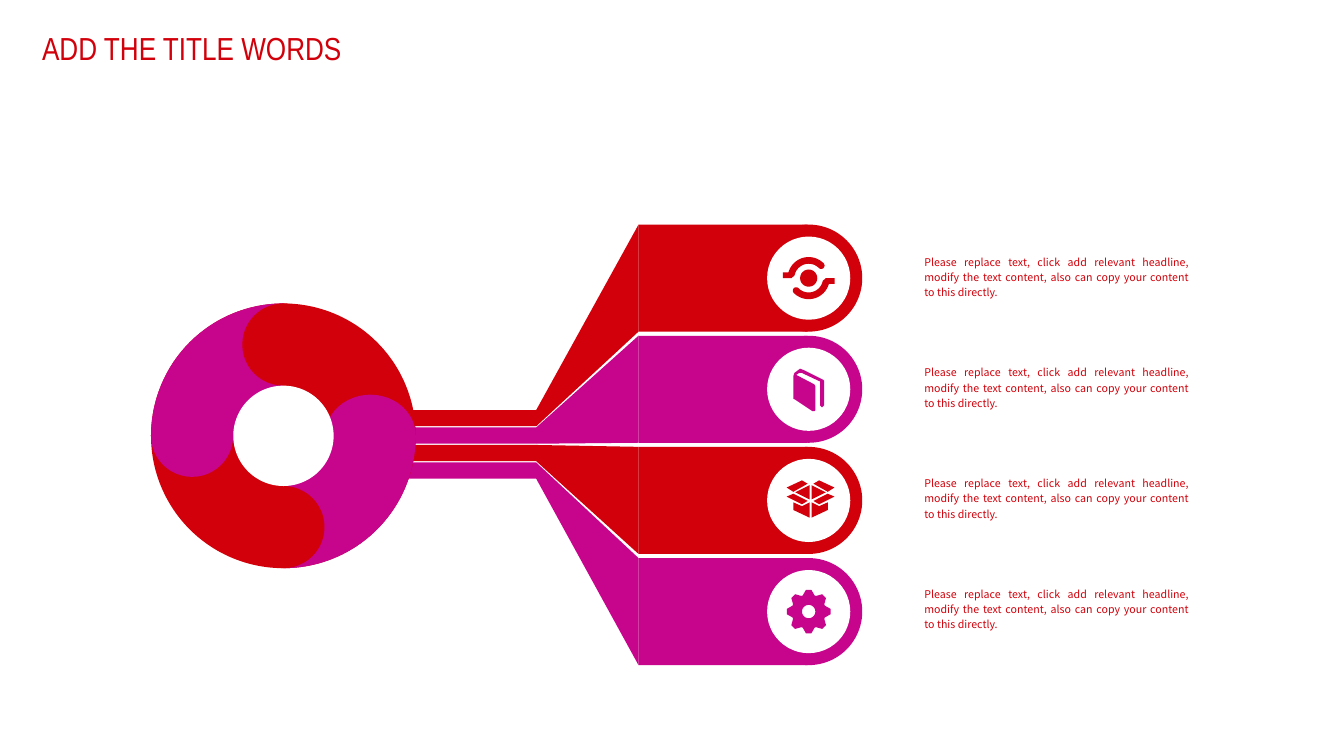
import math
from dataclasses import dataclass

import pptx
import pptx.dml.color
import pptx.enum.shapes
import pptx.enum.text
import pptx.shapes.autoshape
import pptx.shapes.shapetree
import pptx.text.text
import pptx.util

Point = tuple[float, float]
Contour = list[Point]
Shapes = pptx.shapes.shapetree.SlideShapes
Preset = pptx.enum.shapes.MSO_SHAPE

CELL = pptx.util.Inches(0.1)
COLUMNS, ROWS = 140.6, 79.1
RED, PURPLE, WHITE = "D1000A", "C7058C", "FFFFFF"
ADVICE = (
    "Please replace text, click add relevant headline, modify the text content, "
    "also can copy your content to this directly."
)

BRANCH_TOP, BRANCH_PITCH, BRANCH_HEIGHT = 23.5, 11.63, 11.2
STEM_TOP, STEM_PITCH, STEM_HEIGHT = 42.9, 1.83, 1.7
STEM_LEFT, STEM_RIGHT = 42.7, 56.1
BODY_LEFT, BODY_WIDTH = 66.8, 17.7
BADGE_COLUMN, BADGE_DIAMETER = 84.6, 8.7
ADVICE_LEFT, ADVICE_TOP, ADVICE_PITCH = 96.7, 26.5, 11.57
HUB_COLUMN, HUB_ROW = 29.65, 45.6
RING_DIAMETER, HOLE_DIAMETER, LOBE_DIAMETER = 27.7, 10.5, 8.6


@dataclass(frozen=True)
class Branch:
    color: str
    icon: list[Contour]


@dataclass(frozen=True)
class Lobe:
    color: str
    column: float
    row: float
    width: float = LOBE_DIAMETER


def cells(count: float) -> int:
    return round(count * CELL)


def rgb(color: str) -> pptx.dml.color.RGBColor:
    return pptx.dml.color.RGBColor.from_string(color)


def paint(shape: pptx.shapes.autoshape.Shape, color: str) -> None:
    shape.shadow.inherit = False
    shape.fill.solid()
    shape.fill.fore_color.rgb = rgb(color)
    shape.line.fill.background()


def block(shapes: Shapes, preset: Preset, left: float, top: float,
          width: float, height: float, color: str) -> pptx.shapes.autoshape.Shape:
    shape = shapes.add_shape(preset, cells(left), cells(top), cells(width), cells(height))
    paint(shape, color)
    return shape


def disc(shapes: Shapes, column: float, row: float, width: float, height: float,
         color: str, preset: Preset = Preset.OVAL) -> pptx.shapes.autoshape.Shape:
    return block(shapes, preset, column - width / 2, row - height / 2, width, height, color)


def outline(shapes: Shapes, contours: list[Contour], color: str) -> None:
    scaled = [[(cells(x), cells(y)) for x, y in contour] for contour in contours]
    builder = shapes.build_freeform(*scaled[0][0], scale=1.0)
    builder.add_line_segments(scaled[0][1:], close=True)
    for contour in scaled[1:]:
        builder.move_to(*contour[0])
        builder.add_line_segments(contour[1:], close=True)
    paint(builder.convert_to_shape(), color)


def polar(radius: float, degrees: float) -> Point:
    angle = math.radians(degrees)
    return radius * math.cos(angle), radius * math.sin(angle)


def arc(radius: float, start: float, end: float, center: Point = (0, 0)) -> Contour:
    steps = 24
    turns = [polar(radius, start + (end - start) * step / steps) for step in range(steps + 1)]
    return [(center[0] + x, center[1] + y) for x, y in turns]


def eye_icon() -> list[Contour]:
    lid = [(-2.7, 0), (-2.7, -0.6), *arc(2.2, 196, 315),
           *arc(0.35, 315, 495, polar(1.85, 315)),
           *arc(1.5, 315, 191), (-1.8, 0)]
    return [lid, [(-x, -y) for x, y in lid], arc(0.9, 0, 360)]


def book_icon() -> list[Contour]:
    return [[
        (1.5, -1), (-0.5, -2), (-0.9, -2.15), (-1.5, -1.7), (-1.6, -1.4), (-1.6, 1),
        (-1.4, 1.1), (0.4, 2.3), (0.6, 2.3), (0.7, 2.2), (0.7, -0.3), (0.6, -0.5),
        (-1.3, -1.5), (-1, -1.7), (-0.7, -1.7), (1.2, -0.8), (1.2, 1.7), (1.4, 1.9),
        (1.6, 1.7), (1.6, -0.9),
    ]]


def box_icon() -> list[Contour]:
    half = [
        [(0.1, -1.6), (1.6, -0.85), (0.1, -0.1)],
        [(2.5, -0.4), (0.9, 0.4), (0.3, 0.05), (1.8, -0.7)],
        [(2.5, -1.35), (1.8, -0.9), (0.3, -1.75), (0.9, -2.1)],
        [(0.1, 0.2), (0.1, 1.8), (1.8, 1), (1.8, 0.2), (0.9, 0.6)],
    ]
    return [[(0.2 + side * x, y) for x, y in face] for side in (-1, 1) for face in half]


def gear_icon() -> list[Contour]:
    tooth = [(1.8, -20), (2.3, -7), (2.3, 7), (1.8, 20)]
    rim = [polar(radius, turn + angle) for turn in range(0, 360, 45) for radius, angle in tooth]
    return [rim, arc(0.7, 360, 0)]


def write(paragraph: pptx.text.text._Paragraph, words: str, font: str, size: float,
          spacing: float, alignment: pptx.enum.text.PP_ALIGN) -> None:
    paragraph.text = words
    paragraph.alignment = alignment
    paragraph.line_spacing = spacing
    paragraph.font.name = font
    paragraph.font.size = pptx.util.Pt(size)
    paragraph.font.color.rgb = rgb(RED)


def draw_title(shapes: Shapes) -> None:
    title = shapes.title
    title.left, title.top = cells(3.4), cells(0.5)
    title.width, title.height = cells(35.4), cells(6.3)
    frame = title.text_frame
    frame.auto_size = pptx.enum.text.MSO_AUTO_SIZE.NONE
    frame.vertical_anchor = pptx.enum.text.MSO_ANCHOR.TOP
    write(frame.paragraphs[0], "ADD THE TITLE WORDS", "Arial Narrow", 24, 1.5,
          pptx.enum.text.PP_ALIGN.LEFT)


def draw_branch(shapes: Shapes, branch: Branch, index: int) -> None:
    top = BRANCH_TOP + index * BRANCH_PITCH
    stem = STEM_TOP + index * STEM_PITCH
    middle = top + BRANCH_HEIGHT / 2
    block(shapes, Preset.RECTANGLE, BODY_LEFT, top, BODY_WIDTH, BRANCH_HEIGHT, branch.color)
    block(shapes, Preset.RECTANGLE, STEM_LEFT, stem, STEM_RIGHT - STEM_LEFT, STEM_HEIGHT,
          branch.color)
    outline(shapes, [[(STEM_RIGHT, stem), (BODY_LEFT, top), (BODY_LEFT, top + BRANCH_HEIGHT),
                      (STEM_RIGHT, stem + STEM_HEIGHT)]], branch.color)
    disc(shapes, BADGE_COLUMN, middle, BRANCH_HEIGHT, BRANCH_HEIGHT, branch.color)
    disc(shapes, BADGE_COLUMN, middle, BADGE_DIAMETER, BADGE_DIAMETER, WHITE)
    placed = [[(BADGE_COLUMN + x, middle + y) for x, y in contour] for contour in branch.icon]
    outline(shapes, placed, branch.color)


def draw_advice(shapes: Shapes, index: int) -> None:
    advice = shapes.add_textbox(cells(ADVICE_LEFT), cells(ADVICE_TOP + index * ADVICE_PITCH),
                                cells(27.7), cells(4.7))
    frame = advice.text_frame
    frame.word_wrap = True
    frame.margin_left = frame.margin_right = frame.margin_top = frame.margin_bottom = 0
    write(frame.paragraphs[0], ADVICE, "Noto Sans CJK SC", 8, 1.2,
          pptx.enum.text.PP_ALIGN.JUSTIFY)


def draw_ring(shapes: Shapes) -> None:
    disc(shapes, HUB_COLUMN, HUB_ROW, RING_DIAMETER, RING_DIAMETER, RED)
    for start in (180, 0):
        sector = disc(shapes, HUB_COLUMN, HUB_ROW, RING_DIAMETER, RING_DIAMETER, PURPLE,
                      Preset.PIE)
        sector.adjustments[0] = start * 0.6
        sector.adjustments[1] = (start + 90) * 0.6
    reach = (RING_DIAMETER - LOBE_DIAMETER) / 2
    lobes = [
        Lobe(RED, 0, -reach),
        Lobe(PURPLE, -reach, 0),
        Lobe(RED, 0, reach),
        Lobe(PURPLE, reach - 0.45, 0, 9.5),
    ]
    for lobe in lobes:
        disc(shapes, HUB_COLUMN + lobe.column, HUB_ROW + lobe.row, lobe.width,
             LOBE_DIAMETER, lobe.color)
    disc(shapes, HUB_COLUMN, HUB_ROW, HOLE_DIAMETER, HOLE_DIAMETER, WHITE)


def main() -> None:
    deck = pptx.Presentation()
    deck.slide_width, deck.slide_height = cells(COLUMNS), cells(ROWS)
    shapes = deck.slides.add_slide(deck.slide_layouts[5]).shapes
    draw_title(shapes)
    branches = [
        Branch(RED, eye_icon()),
        Branch(PURPLE, book_icon()),
        Branch(RED, box_icon()),
        Branch(PURPLE, gear_icon()),
    ]
    for index, branch in enumerate(branches):
        draw_branch(shapes, branch, index)
        draw_advice(shapes, index)
    draw_ring(shapes)
    deck.save("out.pptx")


if __name__ == "__main__":
    main()
